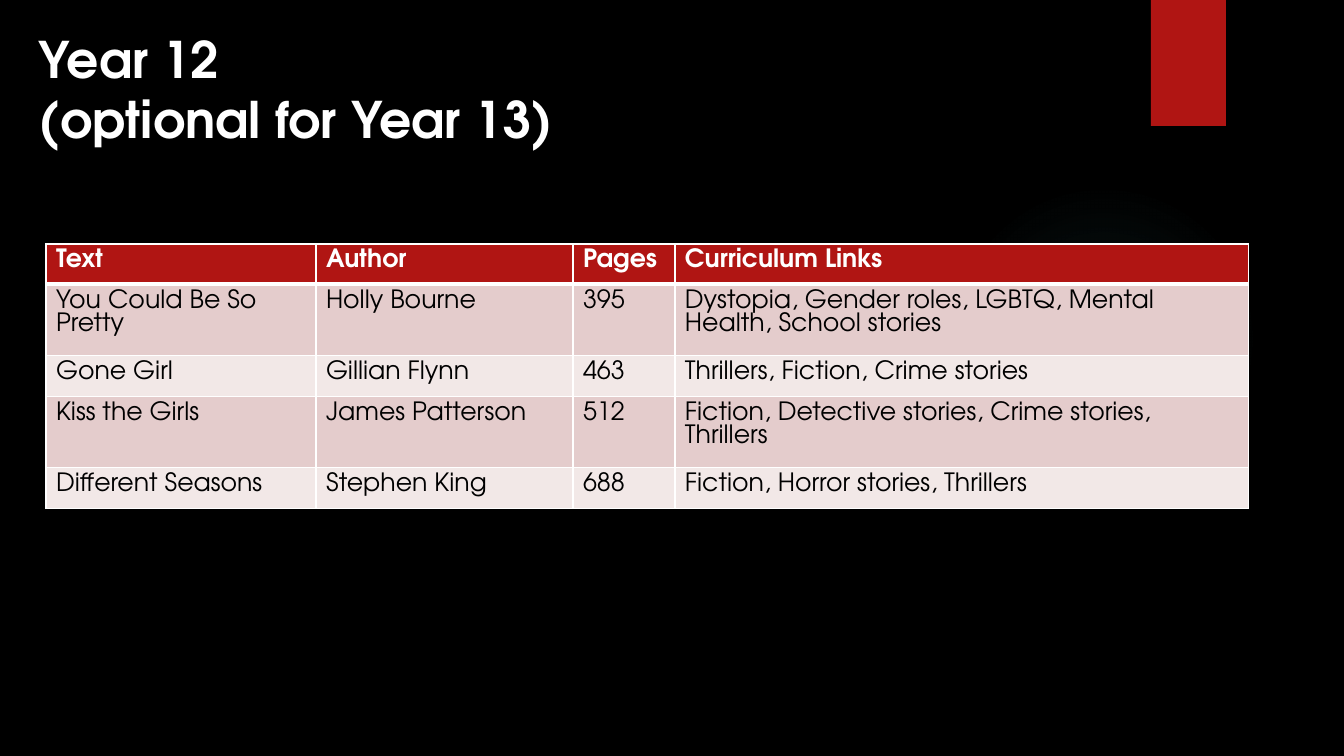
from dataclasses import dataclass

from pptx import Presentation
from pptx import util as u
from pptx.dml.color import RGBColor
from pptx.enum import shapes, text
from pptx.oxml import parse_xml
from pptx.oxml.ns import nsdecls

EMU_PER_PX = 914400 / 100.8
FONT = "TeX Gyre Adventor"
BLACK = RGBColor(0x00, 0x00, 0x00)
WHITE = RGBColor(0xFF, 0xFF, 0xFF)
RED = RGBColor(0xB0, 0x15, 0x13)
TEAL = RGBColor(0x50, 0xB9, 0xC1)
ROSE = RGBColor(0xE4, 0xCC, 0xCC)
PALE_ROSE = RGBColor(0xF2, 0xE8, 0xE7)

COLUMN_WIDTHS = (270, 257, 102, 574)
HEADER_HEIGHT = 40
LINE_HEIGHT = 30
CELL_PADDING = 11


@dataclass(frozen=True)
class Book:
    title: str
    author: str
    pages: str
    links: str
    lines: int = 1


HEADINGS = Book("Text", "Author", "Pages", "Curriculum Links")
BOOKS = (
    Book("You Could Be So Pretty", "Holly Bourne", "395",
         "Dystopia, Gender roles, LGBTQ, Mental Health, School stories", 2),
    Book("Gone Girl", "Gillian Flynn", "463", "Thrillers, Fiction, Crime stories"),
    Book("Kiss the Girls", "James Patterson", "512",
         "Fiction, Detective stories, Crime stories, Thrillers", 2),
    Book("Different Seasons", "Stephen King", "688", "Fiction, Horror stories, Thrillers"),
)


def px(length: int) -> u.Emu:
    return u.Emu(round(length * EMU_PER_PX))


def box(left: int, top: int, width: int, height: int) -> tuple:
    return px(left), px(top), px(width), px(height)


def set_font(paragraph, size: int, color: RGBColor, bold: bool) -> None:
    font = paragraph.font
    font.name, font.size, font.bold = FONT, u.Pt(size), bold
    font.color.rgb = color


def add_plain_shape(slide, kind, place: tuple, color: RGBColor):
    shape = slide.shapes.add_shape(kind, *place)
    shape.shadow.inherit = False
    shape.fill.solid()
    shape.fill.fore_color.rgb = color
    shape.line.fill.background()
    return shape


def add_glow(slide) -> None:
    glow = add_plain_shape(slide, shapes.MSO_SHAPE.OVAL, box(949, 184, 310, 310), TEAL)
    stops = "".join(
        f'<a:gs pos="{position * 1000}"><a:srgbClr val="{TEAL}">'
        f'<a:alpha val="{alpha * 1000}"/></a:srgbClr></a:gs>'
        for position, alpha in ((0, 7), (36, 6), (69, 0))
    )
    gradient = parse_xml(
        f'<a:gradFill {nsdecls("a")} rotWithShape="1"><a:gsLst>{stops}</a:gsLst>'
        '<a:path path="circle"><a:fillToRect l="50000" t="50000" r="50000" b="50000"/>'
        '</a:path></a:gradFill>'
    )
    properties = glow.fill._xPr
    properties.replace(properties.solidFill, gradient)


def add_title(slide) -> None:
    frame = slide.shapes.add_textbox(*box(29, 23, 555, 132)).text_frame
    frame.word_wrap = True
    frame.auto_size = text.MSO_AUTO_SIZE.SHAPE_TO_FIT_TEXT
    frame.text = "Year 12\n(optional for Year 13)"
    for paragraph in frame.paragraphs:
        set_font(paragraph, 36, WHITE, True)


def fill_cell(cell, wording: str, fill: RGBColor, color: RGBColor,
              top_pt: int, bottom_pt: int, bold: bool) -> None:
    # Borders come before the fill in the cell properties
    properties = cell._tc.get_or_add_tcPr()
    for side, width in (("L", 1), ("R", 1), ("T", top_pt), ("B", bottom_pt)):
        properties.append(parse_xml(
            f'<a:ln{side} {nsdecls("a")} w="{u.Pt(width)}"><a:solidFill>'
            f'<a:srgbClr val="{WHITE}"/></a:solidFill></a:ln{side}>'
        ))
    cell.fill.solid()
    cell.fill.fore_color.rgb = fill
    cell.text = wording
    set_font(cell.text_frame.paragraphs[0], 18, color, bold)


def add_book_table(slide) -> None:
    rows = (HEADINGS, *BOOKS)
    heights = [HEADER_HEIGHT] + [book.lines * LINE_HEIGHT + CELL_PADDING for book in BOOKS]
    table = slide.shapes.add_table(
        len(rows), len(COLUMN_WIDTHS), *box(46, 244, sum(COLUMN_WIDTHS), sum(heights))
    ).table
    for column, width in zip(table.columns, COLUMN_WIDTHS):
        column.width = px(width)
    for index, (book, height) in enumerate(zip(rows, heights)):
        table.rows[index].height = px(height)
        is_header = index == 0
        fill = RED if is_header else (PALE_ROSE, ROSE)[index % 2]
        wordings = (book.title, book.author, book.pages, book.links)
        for cell, wording in zip(table.rows[index].cells, wordings):
            fill_cell(cell, wording, fill, WHITE if is_header else BLACK,
                      top_pt=3 if index == 1 else 1,
                      bottom_pt=3 if is_header else 1, bold=is_header)


def main() -> None:
    deck = Presentation()
    deck.slide_width, deck.slide_height = px(1344), px(756)
    slide = deck.slides.add_slide(deck.slide_layouts[6])
    slide.background.fill.solid()
    slide.background.fill.fore_color.rgb = BLACK

    # Backdrop: faint glow and red tab
    add_glow(slide)
    add_plain_shape(slide, shapes.MSO_SHAPE.RECTANGLE, box(1151, 0, 75, 126), RED)

    # Heading and reading list
    add_title(slide)
    add_book_table(slide)
    deck.save("out.pptx")


if __name__ == "__main__":
    main()
